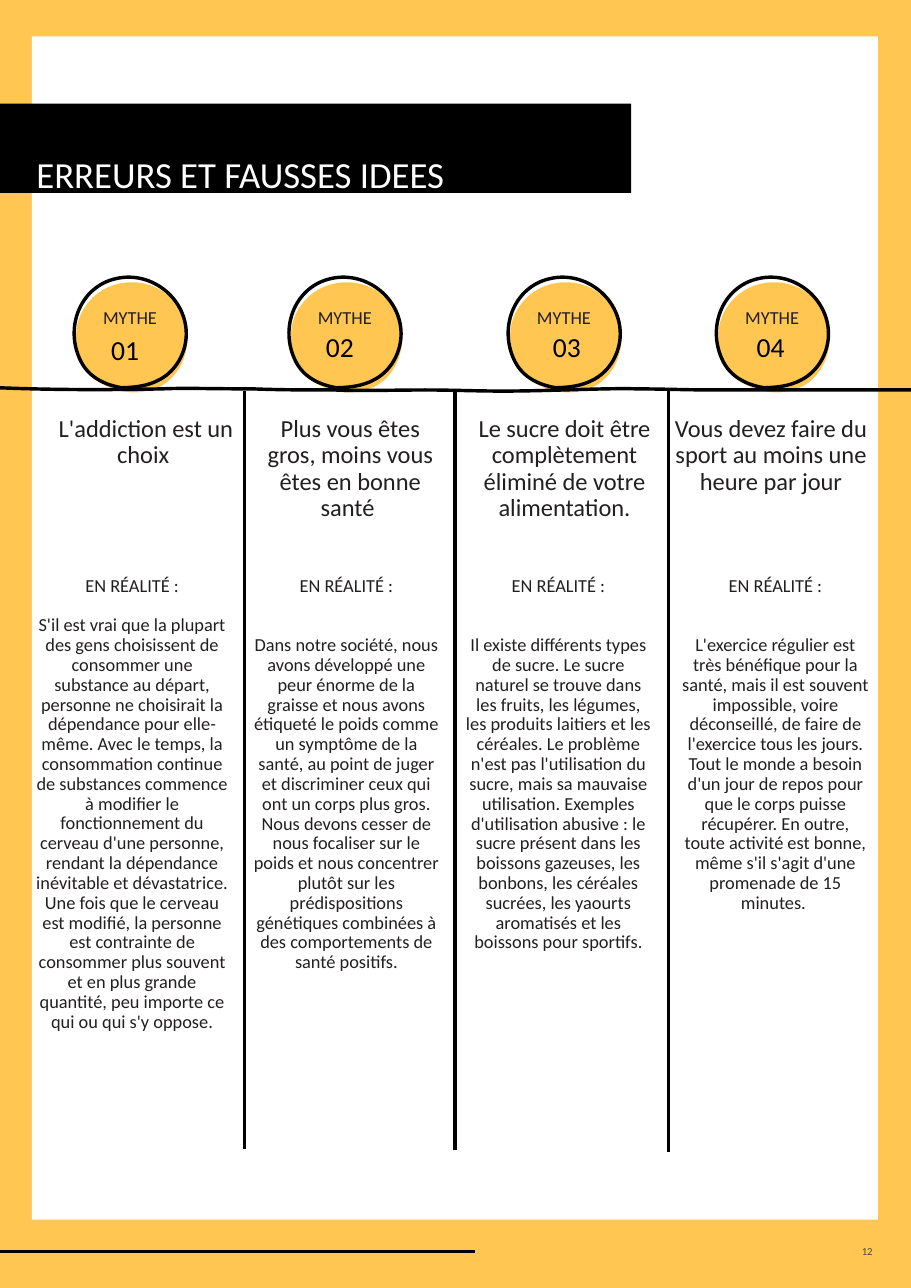
from collections import namedtuple

from lxml import etree
from pptx import Presentation
from pptx.dml.color import RGBColor
from pptx.enum.shapes import MSO_CONNECTOR as Connector, MSO_SHAPE as Preset
from pptx.enum.text import MSO_ANCHOR as Anchor, MSO_AUTO_SIZE as AutoSize, PP_ALIGN as Align
from pptx.oxml.ns import qn
from pptx.util import Inches, Pt

FONT = "Calibri"
YELLOW, BLACK, WHITE, INK, GREY = "FFC652", "000000", "FFFFFF", "231F20", "4B4B4B"
BLANK_LINE = 13  # points, about one line of 12 pt text at 0.9 spacing

Box = namedtuple("Box", "left top width height")
Myth = namedtuple("Myth", "heading reality heading_box reality_box gap badge_left number_at")

# Cubic curves inside their box: a start point, then (control, control, end) triples
DISC = [(0.17, 0.88),
        ((0.26, 0.96), (0.38, 1.01), (0.5, 1.02)), ((0.59, 1.03), (0.69, 1.01), (0.78, 0.97)),
        ((0.94, 0.89), (1.04, 0.7), (1.03, 0.51)), ((1.03, 0.35), (0.93, 0.19), (0.8, 0.1)),
        ((0.66, 0.01), (0.48, 0), (0.33, 0.06)), ((0.18, 0.12), (0.06, 0.26), (0.03, 0.42)),
        ((0, 0.59), (0.05, 0.76), (0.17, 0.88))]
RING = [(0.39, 1.01),
        ((0.53, 1.01), (0.67, 1), (0.79, 0.93)), ((0.93, 0.85), (1.01, 0.7), (1.02, 0.55)),
        ((1.04, 0.21), (0.71, -0.06), (0.38, 0.02)), ((0.07, 0.09), (-0.08, 0.44), (0.05, 0.74)),
        ((0.13, 0.93), (0.31, 1), (0.51, 1.02))]
WAVE = [(0, 0),
        ((0.49, 0.02), (0.98, 0.02), (1.47, 0.01)), ((1.67, 0), (1.92, 0.01), (2.3, 0.01)),
        ((2.55, 0.02), (2.79, 0.02), (3.04, 0.02)), ((3.23, 0.03), (3.63, 0.02), (3.86, 0.02)),
        ((4.09, 0.02), (4.33, 0.03), (4.57, 0.03)), ((4.97, 0.03), (5.55, 0), (5.78, 0.01)),
        ((6.01, 0.01), (6.24, 0.02), (6.48, 0.02)), ((6.67, 0.02), (7.4, 0.02), (7.45, 0.02)),
        ((7.68, 0.02), (7.9, 0.02), (8.12, 0.02)), ((8.17, 0.02), (8.22, 0.02), (8.27, 0.02))]

MYTHS = [
    Myth("L'addiction est un choix ",
         "S'il est vrai que la plupart des gens choisissent de consommer une substance au départ, "
         "personne ne choisirait la dépendance pour elle-même. Avec le temps, la consommation "
         "continue de substances commence à modifier le fonctionnement du cerveau d'une personne, "
         "rendant la dépendance inévitable et dévastatrice. Une fois que le cerveau est modifié, "
         "la personne est contrainte de consommer plus souvent et en plus grande quantité, peu "
         "importe ce qui ou qui s'y oppose.",
         Box(0.27, 3.73, 2.11, 0.46), Box(0.21, 5.18, 1.98, 5.62), 1, 0.67, (0.91, 2.97)),
    Myth("Plus vous êtes gros, moins vous êtes en bonne santé ",
         "Dans notre société, nous avons développé une peur énorme de la graisse et nous avons "
         "étiqueté le poids comme un symptôme de la santé, au point de juger et discriminer ceux "
         "qui ont un corps plus gros. Nous devons cesser de nous focaliser sur le poids et nous "
         "concentrer plutôt sur les prédispositions génétiques combinées à des comportements de "
         "santé positifs.",
         Box(2.22, 3.73, 1.92, 0.46), Box(2.19, 5.18, 1.91, 5.62), 2, 2.62, (2.86, 2.95)),
    Myth("Le sucre doit être complètement éliminé de votre alimentation.",
         "Il existe différents types de sucre. Le sucre naturel se trouve dans les fruits, les "
         "légumes, les produits laitiers et les céréales. Le problème n'est pas l'utilisation du "
         "sucre, mais sa mauvaise utilisation. Exemples d'utilisation abusive : le sucre présent "
         "dans les boissons gazeuses, les bonbons, les céréales sucrées, les yaourts aromatisés "
         "et les boissons pour sportifs.",
         Box(4.2, 3.73, 1.85, 0.46), Box(4.12, 5.18, 1.9, 5.62), 2, 4.61, (4.92, 2.95)),
    Myth("Vous devez faire du sport au moins une heure par jour",
         "L'exercice régulier est très bénéfique pour la santé, mais il est souvent impossible, "
         "voire déconseillé, de faire de l'exercice tous les jours. Tout le monde a besoin d'un "
         "jour de repos pour que le corps puisse récupérer. En outre, toute activité est bonne, "
         "même s'il s'agit d'une promenade de 15 minutes. ",
         Box(5.97, 3.73, 2.06, 0.46), Box(6.08, 5.18, 1.92, 5.62), 2, 6.5, (6.77, 2.95)),
]
DIVIDERS = [(2.22, 10.43), (4.13, 10.44), (6.07, 10.46)]


def color(hex_string):
    return RGBColor.from_string(hex_string)


def inches(box):
    return [Inches(length) for length in box]


def add_span(para, text, size, ink):
    span = para.add_run()
    span.text = text
    span.font.name, span.font.size = FONT, Pt(size)
    span.font.color.rgb = color(ink)


def add_text(page, box, texts, size, ink=INK, align=Align.CENTER, spacing=0.9,
             anchor=Anchor.TOP, gap=0):
    frame = page.shapes.add_textbox(*inches(box)).text_frame
    frame.word_wrap = True
    frame.vertical_anchor = anchor
    for index, text in enumerate(texts):
        para = frame.add_paragraph() if index else frame.paragraphs[0]
        para.alignment, para.line_spacing = align, spacing
        if index:
            para.space_before = Pt(gap)
        add_span(para, text, size, ink)


def add_panel(page, box, fill):
    panel = page.shapes.add_shape(Preset.RECTANGLE, *inches(box))
    panel.shadow.inherit = False
    panel.fill.solid()
    panel.fill.fore_color.rgb = color(fill)
    panel.line.fill.background()


def add_line(page, start, end, width):
    line = page.shapes.add_connector(Connector.STRAIGHT, *inches(start + end))
    line.line.color.rgb, line.line.width = color(BLACK), Pt(width)
    etree.SubElement(line.element.spPr, qn("a:effectLst"))


def add_step(outline_path, tag, points):
    step = etree.SubElement(outline_path, qn(tag))
    for x, y in points:
        etree.SubElement(step, qn("a:pt"), x=str(Inches(x)), y=str(Inches(y)))


def add_curve(page, box, curve, fill=None):
    # The box diagonal sets the extent, then the curve takes its place
    left, top, width, height = inches(box)
    builder = page.shapes.build_freeform(left, top)
    builder.add_line_segments([(left + width, top + height)], close=False)
    outline = builder.convert_to_shape()
    outline_path = outline.element.find(".//" + qn("a:path"))
    for step in list(outline_path):
        outline_path.remove(step)
    add_step(outline_path, "a:moveTo", curve[:1])
    for triple in curve[1:]:
        add_step(outline_path, "a:cubicBezTo", triple)
    outline.shadow.inherit = False
    if fill:
        etree.SubElement(outline_path, qn("a:close"))
        outline.fill.solid()
        outline.fill.fore_color.rgb = color(fill)
        outline.line.fill.background()
    else:
        outline.fill.background()
        outline.line.color.rgb, outline.line.width = color(BLACK), Pt(2.25)


def draw_frame(page, box):
    # Yellow border, white sheet, footer rule and page number
    add_panel(page, box, YELLOW)
    add_panel(page, Box(box.left + 0.29, box.top + 0.33, 7.68, 10.74), WHITE)
    footer = box.top + 11.36
    add_line(page, (box.left, footer), (box.left + 4.31, footer), 1.5)
    add_text(page, Box(box.left + 6.94, footer - 0.08, 1.08, 0.16), ["12"], 7, GREY,
             Align.RIGHT, 1, Anchor.MIDDLE)


def draw_title(page, box):
    # Black banner, brought in front of the frame
    title = page.shapes.title
    title.left, title.top, title.width, title.height = inches(box)
    title.fill.solid()
    title.fill.fore_color.rgb = color(BLACK)
    frame = title.text_frame
    frame.auto_size, frame.word_wrap = AutoSize.NONE, True
    frame.vertical_anchor = Anchor.MIDDLE
    frame.margin_left, frame.margin_top, frame.margin_bottom = Inches(0.33), Inches(0.47), 0
    frame.paragraphs[0].alignment = Align.LEFT
    add_span(frame.paragraphs[0], "ERREURS ET FAUSSES IDEES", 24, WHITE)
    page.shapes.element.append(title.element)


def draw_column(page, myth):
    # Myth heading and the reality below it
    add_text(page, myth.reality_box, ["EN RÉALITÉ :", myth.reality], 12,
             gap=myth.gap * BLANK_LINE)
    add_text(page, myth.heading_box, [myth.heading], 16)


def draw_badge(page, box):
    # Yellow disc, label and hand-drawn ring
    add_curve(page, Box(box.left, box.top + 0.03, 1.04, 1.03), DISC, YELLOW)
    add_text(page, Box(box.left, box.top + 0.26, box.width, 0.24), ["MYTHE"], 12,
             anchor=Anchor.MIDDLE)
    add_curve(page, box, RING)


def main():
    deck = Presentation()
    deck.slide_width, deck.slide_height = Inches(8.27), Inches(11.69)
    page = deck.slides.add_slide(deck.slide_layouts[5])
    draw_frame(page, Box(0, 0, 8.27, 11.69))
    draw_title(page, Box(0, 0.94, 5.73, 0.81))
    for myth in MYTHS:
        draw_column(page, myth)
    for x, bottom in DIVIDERS:
        add_line(page, (x, 3.55), (x, bottom), 2.25)
    for myth in MYTHS:
        draw_badge(page, Box(myth.badge_left, 2.51, 1.02, 1.01))
    add_curve(page, Box(0, 3.52, 8.27, 0.03), WAVE)
    for number, myth in enumerate(MYTHS, 1):
        add_text(page, Box(*myth.number_at, 0.48, 0.4), [f"{number:02}"], 18, BLACK,
                 Align.LEFT, 1)
    deck.save("out.pptx")


if __name__ == "__main__":
    main()
